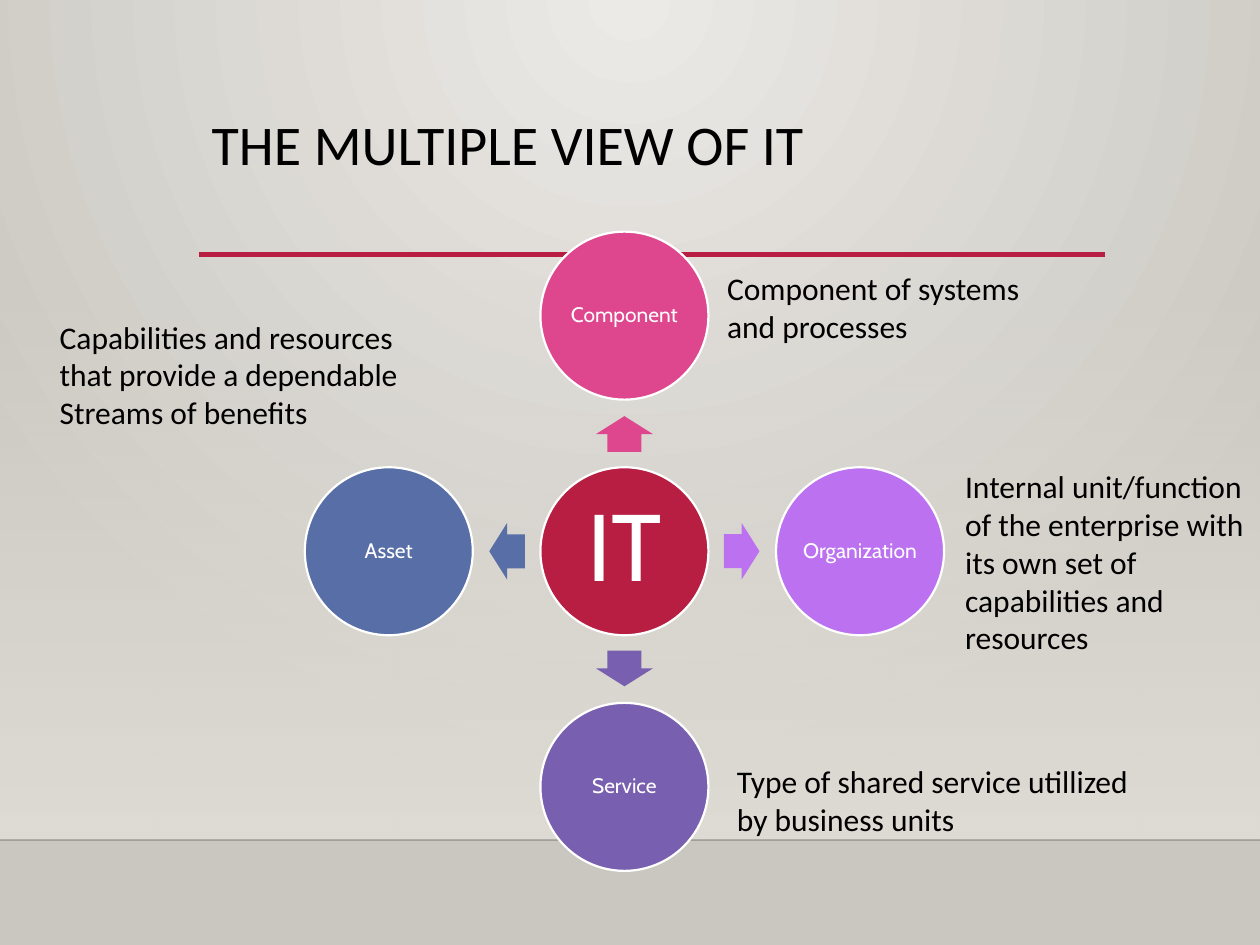
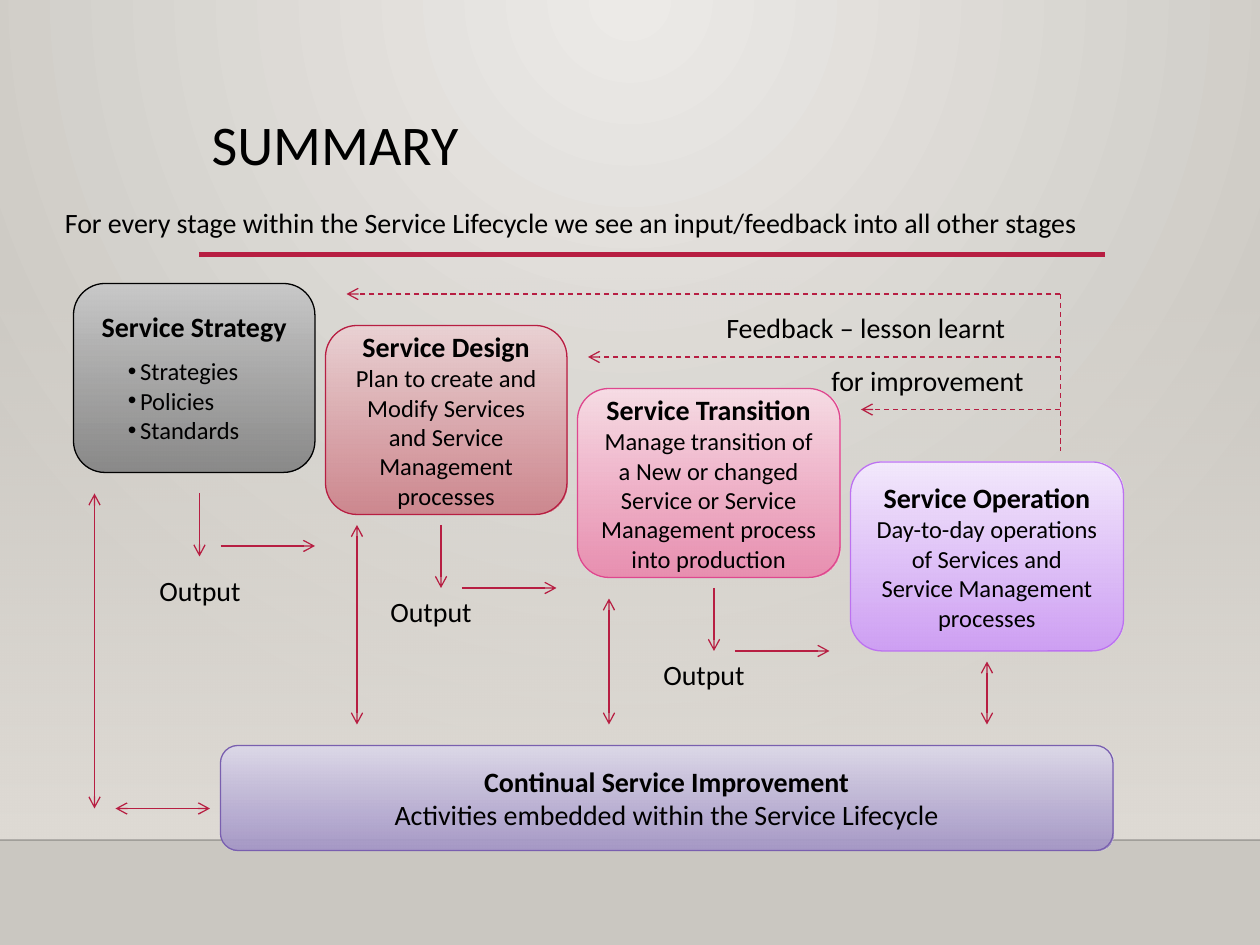
import pptx
import pptx.util
import pptx.dml.color
import pptx.enum.dml
import pptx.enum.shapes
import pptx.enum.text
import pptx.oxml
import pptx.oxml.ns

Pt = pptx.util.Pt
SHAPE = pptx.enum.shapes.MSO_SHAPE
CENTER = pptx.enum.text.PP_ALIGN.CENTER
MIDDLE = pptx.enum.text.MSO_ANCHOR.MIDDLE

RED, BLACK, WHITE = "B71E42", "000000", "FFFFFF"
BODY_FONT, DIAGRAM_FONT = "Calibri", "Cabin"

# Slide 1: hub and spokes (label, colour, column step, row step, arrow rotation)
HUB_CENTER = (356.8, 315)
CIRCLE_SIZE, CIRCLE_PITCH, ARROW_PITCH = 96, 134.64, 67
ARROW_SIZE = (20.4, 32.4)
SPOKES = [
    ("Component", "DE478E", 0, -1, 270),
    ("Organization", "BC72F0", 1, 0, 0),
    ("Service", "795FAF", 0, 1, 90),
    ("Asset", "586EA6", -1, 0, 180),
]
VIEW_NOTES = [
    ("Component of systems\nand processes", 408.4, 150, 183.6, 51),
    ("Internal unit/function\vof the enterprise with\vits own set of \vcapabilities and\vresources",
     544.4, 263.4, 175.6, 116.6),
    ("Type of shared service utillized\vby business units", 414, 432, 241.2, 51),
    ("Capabilities and resources\vthat provide a dependable\nStreams of benefits", 27, 178, 210.2, 72.8),
]

# Slide 2: boxes (heading, body lines, body size, place, top, bottom and line colours)
STAGES = [
    ("Service Strategy", [], 14, (42, 162, 138, 108), "C8C8C8", "848484", BLACK),
    ("Service Design", ["Plan to create and Modify Services and Service Management processes"],
     14, (186, 186, 138, 108), "EAD1D3", "CD828A", RED),
    ("Service Transition",
     ["Manage transition of a New or changed Service or Service Management process into production"],
     14, (330, 222, 150, 108), "F7DCE5", "EA8AAE", "DE478E"),
    ("Service Operation", ["Day-to-day operations of Services and", "Service Management processes"],
     14, (486, 264, 156, 108), "F4EAFD", "CE9CF7", "BC72F0"),
    ("Continual Service Improvement", ["Activities embedded within the Service Lifecycle"],
     16, (126, 426, 510, 60), "DCD8E8", "A395C6", "795FAF"),
]
STRATEGY_ITEMS = ["Strategies", "Policies", "Standards"]
# Output of each stage: down arrow start, side arrow height, label corner
OUTPUTS = [
    ((114, 282), 312, (84, 324)),
    ((252, 300), 336, (216, 336)),
    ((408, 336), 372, (372, 372)),
]
IMPROVEMENT_LINKS = [
    (564, 378, 564, 414), (348, 342, 348, 414), (204, 300, 204, 414),
    (54, 282, 54, 462), (66, 462, 120, 462),
]
FEEDBACK_X, FEEDBACK_BOTTOM = 606, 258
FEEDBACK_ENDS = [(198, 168), (336, 204), (492, 234)]
SUMMARY_NOTES = [
    ("Feedback – lesson learnt", 408, 174, 175.7, 26.6),
    ("for improvement", 468, 204, 126, 26.6),
    ("For every stage within the Service Lifecycle we see an input/feedback into all other stages",
     30, 114, 600.5, 26.6),
]


def rgb(hex_color):
    return pptx.dml.color.RGBColor.from_string(hex_color)


def points(*values):
    return [Pt(value) for value in values]


def make_element(tag, **attributes):
    element = pptx.oxml.parse_xml(f"<{tag} {pptx.oxml.ns.nsdecls('a')}/>")
    for name, value in attributes.items():
        element.set(name, str(value))
    return element


def set_alpha(color_element, percent):
    color_element.append(make_element("a:alpha", val=percent * 1000))


def fill_gradient(fill, first, last):
    fill.gradient()
    for stop, color in zip(fill.gradient_stops, (first, last)):
        stop.color.rgb = rgb(color)


def add_figure(page, kind, place, fill=None, gradient=None, line=None, line_width=0.75):
    """Add a preset shape with a plain fill or a downward gradient."""
    figure = page.shapes.add_shape(kind, *points(*place))
    figure.shadow.inherit = False
    if gradient:
        fill_gradient(figure.fill, *gradient)
        figure.fill.gradient_angle = 270
    else:
        figure.fill.solid()
        figure.fill.fore_color.rgb = rgb(fill)
    if line:
        figure.line.color.rgb = rgb(line)
        figure.line.width = Pt(line_width)
    else:
        figure.line.fill.background()
    return figure


def style(para, size, color=BLACK, font=BODY_FONT, bold=False):
    para.font.size = Pt(size)
    para.font.name = font
    para.font.bold = bold
    para.font.color.rgb = rgb(color)


def add_text(page, text, left, top, width, height, size):
    box = page.shapes.add_textbox(*points(left, top, width, height))
    box.text_frame.word_wrap = False
    box.text_frame.text = text
    for para in box.text_frame.paragraphs:
        style(para, size)
    return box


def add_line(page, start_x, start_y, end_x, end_y, color=RED, width=0.75,
             head=False, tail=False, dashed=False):
    line = page.shapes.add_connector(pptx.enum.shapes.MSO_CONNECTOR.STRAIGHT,
                                     *points(start_x, start_y, end_x, end_y))
    line.line.color.rgb = rgb(color)
    line.line.width = Pt(width)
    if dashed:
        line.line.dash_style = pptx.enum.dml.MSO_LINE.DASH
    outline = line.element.xpath("./p:spPr/a:ln")[0]
    for tag, wanted in (("a:headEnd", head), ("a:tailEnd", tail)):
        if wanted:
            outline.append(make_element(tag, type="arrow"))
    outline.getparent().append(make_element("a:effectLst"))
    return line


def add_page(deck, title):
    """Add a slide with the shared background, floor band, rule and title."""
    page = deck.slides.add_slide(deck.slide_layouts[6])
    fill_gradient(page.background.fill, "ECEAE7", "CAC7C1")
    gradient = page.element.xpath(".//p:bgPr/a:gradFill")[0]
    gradient.remove(gradient.xpath("./a:lin")[0])
    glow = make_element("a:path", path="circle")
    glow.append(make_element("a:fillToRect", l=43000, t=0, r=43000, b=100000))
    gradient.append(glow)

    wall = add_figure(page, SHAPE.RECTANGLE, (0, 158.4, 720, 321.6), gradient=("DFDBD5", "DFDBD5"))
    set_alpha(wall.element.xpath(".//a:gs/a:srgbClr")[0], 0)
    floor_edge = add_line(page, 0, 480, 720, 480, color="000001", width=1)
    set_alpha(floor_edge.element.xpath(".//a:ln//a:srgbClr")[0], 20)
    add_line(page, 113.8, 145.4, 631.4, 145.4, width=2.5)

    heading = add_text(page, title, 113.8, 63.4, 517.7, 82.8, 32)
    heading.text_frame.word_wrap = True
    heading.text_frame.paragraphs[0].line_spacing = 0.9
    return page


def centered(center_x, center_y, width, height):
    return center_x - width / 2, center_y - height / 2, width, height


def add_circle(page, label, color, center_x, center_y, size):
    circle = add_figure(page, SHAPE.OVAL, centered(center_x, center_y, CIRCLE_SIZE, CIRCLE_SIZE),
                        fill=color, line=WHITE, line_width=1.25)
    frame = circle.text_frame
    frame.margin_left = frame.margin_right = frame.margin_top = frame.margin_bottom = Pt(1.4)
    frame.vertical_anchor = MIDDLE
    frame.word_wrap = False
    frame.text = label
    para = frame.paragraphs[0]
    para.alignment = CENTER
    para.line_spacing = 0.9
    style(para, size, WHITE, DIAGRAM_FONT)


def build_views(deck):
    page = add_page(deck, "THE MULTIPLE VIEW OF IT")
    hub_x, hub_y = HUB_CENTER
    add_circle(page, "IT", RED, hub_x, hub_y, 54)
    for label, color, column, row, rotation in SPOKES:
        place = centered(hub_x + column * ARROW_PITCH, hub_y + row * ARROW_PITCH, *ARROW_SIZE)
        arrow = add_figure(page, SHAPE.RIGHT_ARROW, place, fill=color)
        arrow.adjustments[0] = 0.6
        arrow.adjustments[1] = 0.5
        arrow.rotation = rotation
        add_circle(page, label, color, hub_x + column * CIRCLE_PITCH,
                   hub_y + row * CIRCLE_PITCH, 12)
    for note in VIEW_NOTES:
        add_text(page, *note, 18)


def add_stage(page, heading, body, body_size, place, top_color, bottom_color, line_color):
    stage = add_figure(page, SHAPE.ROUNDED_RECTANGLE, place,
                       gradient=(top_color, bottom_color), line=line_color)
    set_alpha(stage.element.xpath(".//a:gs/a:srgbClr")[1], 92)
    frame = stage.text_frame
    frame.word_wrap = True
    frame.vertical_anchor = MIDDLE
    frame.text = "\n".join([heading, *body])
    for index, para in enumerate(frame.paragraphs):
        para.alignment = CENTER
        style(para, body_size if index else 16, bold=index == 0)
    if not body:
        frame.margin_bottom = Pt(62)


def build_summary(deck):
    page = add_page(deck, "SUMMARY")
    for stage in STAGES:
        add_stage(page, *stage)

    items = add_text(page, "\n".join(STRATEGY_ITEMS), 66, 200, 80, 58.3, 14)
    for para in items.text_frame.paragraphs:
        properties = para._p.get_or_add_pPr()
        properties.set("marL", str(Pt(7)))
        properties.set("indent", str(-Pt(7)))
        properties.insert(0, make_element("a:buChar", char="•"))
        properties.insert(0, make_element("a:buFont", typeface="Arial"))

    for (x, y), side_y, (label_x, label_y) in OUTPUTS:
        add_line(page, x, y, x, y + 36, tail=True)
        add_line(page, x + 12, side_y, x + 66, side_y, tail=True)
        add_text(page, "Output", label_x, label_y, 63.4, 26.6, 16)
    for link in IMPROVEMENT_LINKS:
        add_line(page, *link, head=True, tail=True)
    for end_x, y in FEEDBACK_ENDS:
        add_line(page, FEEDBACK_X, y, end_x, y, tail=True, dashed=True)
    add_line(page, FEEDBACK_X, FEEDBACK_ENDS[0][1], FEEDBACK_X, FEEDBACK_BOTTOM, dashed=True)
    for note in SUMMARY_NOTES:
        add_text(page, *note, 16)


def main():
    deck = pptx.Presentation()
    deck.slide_width, deck.slide_height = points(720, 540)
    build_views(deck)
    build_summary(deck)
    deck.save("out.pptx")


if __name__ == "__main__":
    main()
